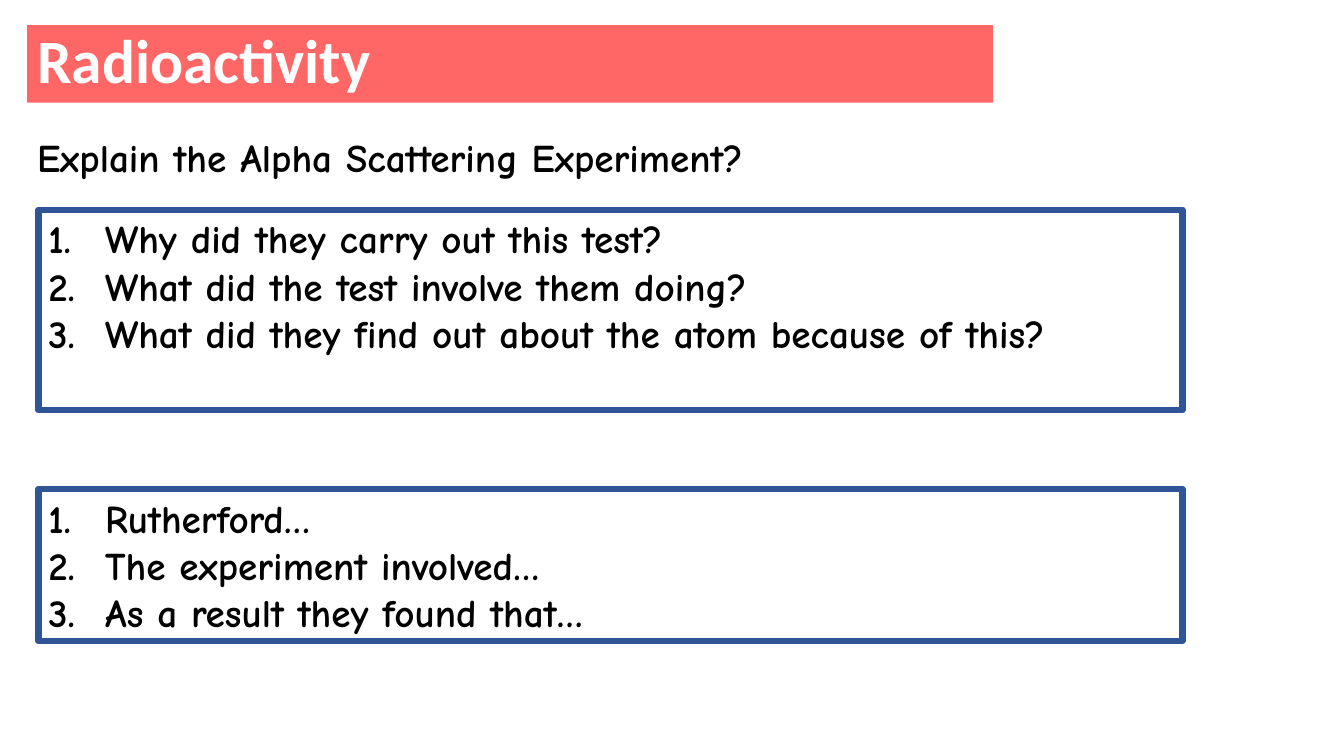
from lxml import etree
from pptx import Presentation
from pptx.dml.color import RGBColor
from pptx.enum import text as t
from pptx.oxml import ns
from pptx.util import Pt

HEADING = "Radioactivity"
PROMPT = "Explain the Alpha Scattering Experiment?"
QUESTIONS = [
    "Why did they carry out this test?",
    "What did the test involve them doing?",
    "What did they find out about the atom because of this?",
]
STARTERS = [
    "Rutherford…",
    "The experiment involved…",
    "As a result they found that…",
]

CORAL = RGBColor(0xFF, 0x66, 0x66)
BLUE = RGBColor(0x2F, 0x55, 0x97)
WHITE = RGBColor(0xFF, 0xFF, 0xFF)
BLACK = RGBColor(0, 0, 0)

MARGIN, BOX_LEFT, BOX_WIDTH = 19.4, 27.4, 817.2
INDENT = Pt(40.5)


def place(part, left, top, width, height):
    part.left, part.top, part.width, part.height = map(Pt, (left, top, width, height))


def style(paragraph, font_name, size, color):
    paragraph.alignment = t.PP_ALIGN.LEFT
    font = paragraph.font
    font.name, font.size, font.bold = font_name, Pt(size), True
    font.color.rgb = color


def paint(part, fill, line=None):
    part.fill.solid()
    part.fill.fore_color.rgb = fill
    if line is not None:
        part.line.color.rgb = line
        part.line.width = Pt(4.5)


def number(paragraph):
    """Turn the paragraph into a hanging item numbered 1., 2., 3."""
    props = paragraph._p.get_or_add_pPr()
    props.set("marL", str(INDENT))
    props.set("indent", str(-INDENT))
    etree.SubElement(props, ns.qn("a:buFont"), typeface="+mj-lt")
    etree.SubElement(props, ns.qn("a:buAutoNum"), type="arabicPeriod")


def fill_list(box, items, top, height):
    place(box, BOX_LEFT, top, BOX_WIDTH, height)
    paint(box, WHITE, BLUE)
    frame = box.text_frame
    frame.text = "\n".join(items)
    frame.auto_size = t.MSO_AUTO_SIZE.NONE
    frame.vertical_anchor = t.MSO_ANCHOR.TOP
    for item in frame.paragraphs:
        item.space_before = Pt(0)
        item.line_spacing = 1.0
        number(item)
        style(item, "Comic Neue", 28, BLACK)


deck = Presentation()
deck.slide_width, deck.slide_height = Pt(960), Pt(540)
slide = deck.slides.add_slide(deck.slide_layouts.get_by_name("Two Content"))
heading, questions, starters = list(slide.placeholders)[:3]

place(heading, MARGIN, 18, 689.8, 55.4)
paint(heading, CORAL)
heading.text_frame.text = HEADING
heading.text_frame.auto_size = t.MSO_AUTO_SIZE.NONE
heading.text_frame.vertical_anchor = t.MSO_ANCHOR.MIDDLE
heading.text_frame.paragraphs[0].line_spacing = 0.9
style(heading.text_frame.paragraphs[0], "Calibri", 44, WHITE)

prompt = slide.shapes.add_textbox(Pt(MARGIN), Pt(91.4), Pt(603.4), Pt(41))
paint(prompt, WHITE, WHITE)
prompt.text_frame.word_wrap = True
prompt.text_frame.text = PROMPT
style(prompt.text_frame.paragraphs[0], "Comic Neue", 28, BLACK)

fill_list(questions, QUESTIONS, 149.8, 143.3)
fill_list(starters, STARTERS, 349.2, 108.7)

deck.save("out.pptx")
